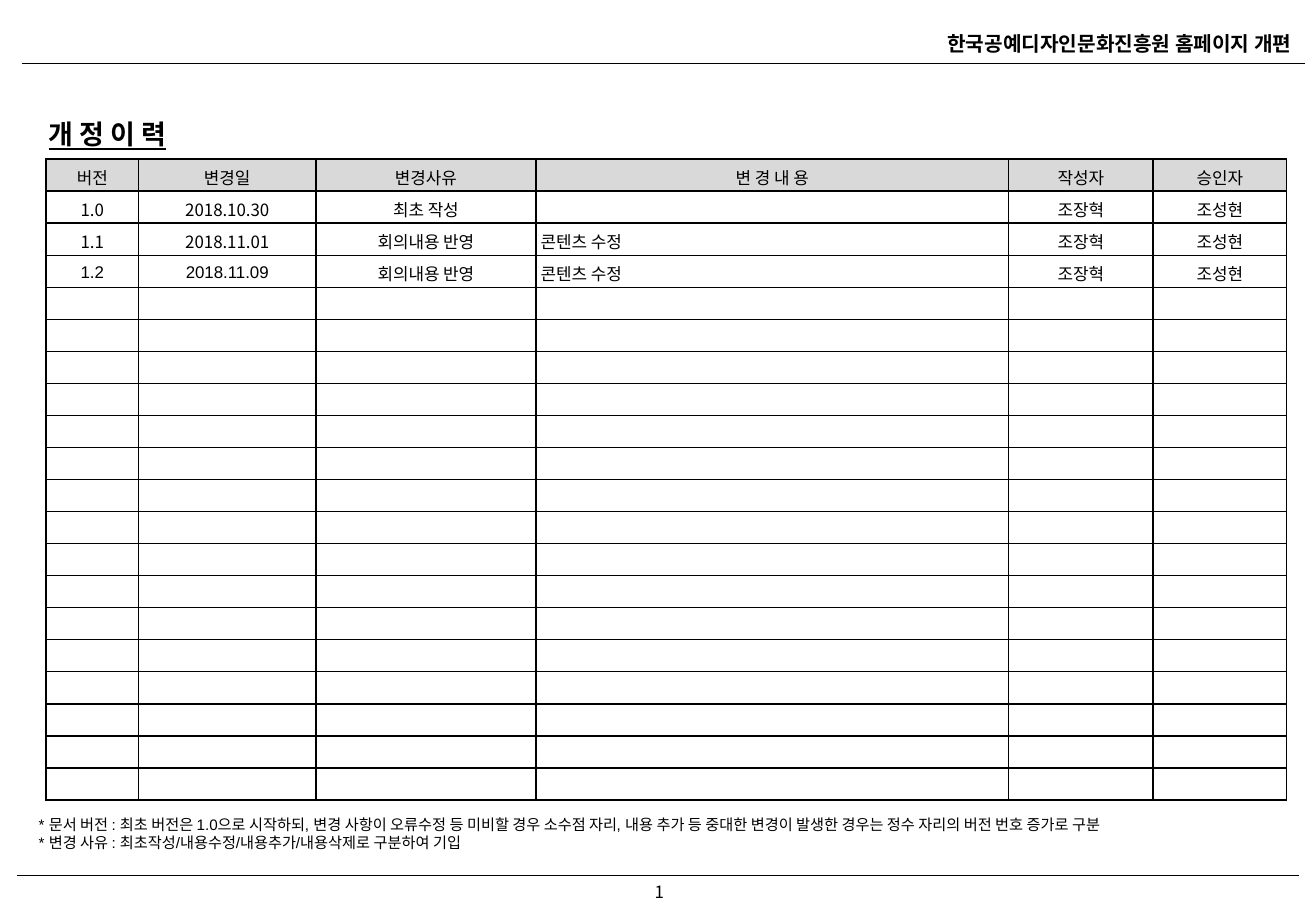
import pptx
import pptx.dml.color
import pptx.enum.dml
import pptx.enum.shapes
import pptx.enum.text
import pptx.oxml.ns
import pptx.util
from lxml import etree

BLACK = pptx.dml.color.RGBColor(0x00, 0x00, 0x00)
WHITE = pptx.dml.color.RGBColor(0xFF, 0xFF, 0xFF)
HEADER_GRAY = pptx.dml.color.RGBColor(0xD9, 0xD9, 0xD9)
KOREAN_FONT = "Noto Sans CJK KR"
LATIN_FONT = "Arial"

GRID = pptx.util.Inches(0.01)
GRID_COLUMNS, GRID_ROWS = 1083, 750

ALIGN = pptx.enum.text.PP_ALIGN
ANCHOR = pptx.enum.text.MSO_ANCHOR
AUTO_SIZE = pptx.enum.text.MSO_AUTO_SIZE

VERSION_COLUMNS = [76, 146, 181, 389, 119, 110]
VERSION_ROWS = 20
REVISIONS = [
    ["버전", "변경일", "변경사유", "변 경 내 용", "작성자", "승인자"],
    ["1.0", "2018.10.30", "최초 작성", "", "조장혁", "조성현"],
    ["1.1", "2018.11.01", "회의내용 반영", "콘텐츠 수정", "조장혁", "조성현"],
    ["1.2", "2018.11.09", "회의내용 반영", "콘텐츠 수정", "조장혁", "조성현"],
]
ARIAL_CELLS = {(3, 0), (3, 1)}
CHANGE_COLUMN = 3
NOTES = [
    "* 문서 버전 : 최초 버전은 1.0으로 시작하되, 변경 사항이 오류수정 등 미비할 경우 소수점 자리, "
    "내용 추가 등 중대한 변경이 발생한 경우는 정수 자리의 버전 번호 증가로 구분",
    "* 변경 사유 : 최초작성/내용수정/내용추가/내용삭제로 구분하여 기입",
]


def place(box):
    return [length * GRID for length in box]


def add_run(paragraph, text, size, latin=KOREAN_FONT, bold=False, underline=False):
    run = paragraph.add_run()
    run.text = text
    run.font.size = pptx.util.Pt(size)
    run.font.name = latin
    run.font.bold = bold
    run.font.underline = underline
    run.font.color.rgb = BLACK
    east_asian = etree.SubElement(run.font._element, pptx.oxml.ns.qn("a:ea"))
    east_asian.set("typeface", KOREAN_FONT)


def add_text(slide, box, lines, size, align=ALIGN.LEFT, anchor=ANCHOR.TOP, **style):
    frame = slide.shapes.add_textbox(*place(box)).text_frame
    frame.word_wrap = True
    frame.vertical_anchor = anchor
    for index, line in enumerate(lines):
        paragraph = frame.add_paragraph() if index else frame.paragraphs[0]
        paragraph.alignment = align
        add_run(paragraph, line, size, **style)


def add_rule(slide, left, top, width):
    rule = slide.shapes.add_connector(
        pptx.enum.shapes.MSO_CONNECTOR.STRAIGHT, *place((left, top, left + width, top)))
    rule.line.color.rgb = BLACK
    rule.line.width = pptx.util.Pt(0.75)
    etree.SubElement(rule._element.spPr, pptx.oxml.ns.qn("a:effectLst"))


def add_header(slide, box):
    left, top, width, height = box
    add_rule(slide, left, top + height, width)
    add_text(slide, (left + 479, top, 576, 30), ["한국공예디자인문화진흥원 홈페이지 개편"],
             12, ALIGN.RIGHT, bold=True)


def add_footer(slide, box):
    left, top, width, height = box
    add_rule(slide, left, top, width)
    add_text(slide, (left + 402, top, 253, height), ["1"], 10, ALIGN.CENTER, ANCHOR.MIDDLE)


def add_heading(slide, box):
    heading = slide.shapes.title
    heading.left, heading.top, heading.width, heading.height = place(box)
    frame = heading.text_frame
    frame.word_wrap = False
    frame.auto_size = AUTO_SIZE.SHAPE_TO_FIT_TEXT
    frame.vertical_anchor = ANCHOR.MIDDLE
    frame.paragraphs[0].alignment = ALIGN.LEFT
    add_run(frame.paragraphs[0], "개 정 이 력", 16, bold=True, underline=True)


def set_borders(cell):
    properties = cell._tc.get_or_add_tcPr()
    for index, side in enumerate(("a:lnL", "a:lnR", "a:lnT", "a:lnB")):
        border = etree.Element(pptx.oxml.ns.qn(side), w=str(pptx.util.Pt(1)))
        fill = etree.SubElement(border, pptx.oxml.ns.qn("a:solidFill"))
        etree.SubElement(fill, pptx.oxml.ns.qn("a:srgbClr"), val=str(BLACK))
        properties.insert(index, border)


def fill_cell(cell, text, background, align, latin):
    cell.fill.solid()
    cell.fill.fore_color.rgb = background
    set_borders(cell)
    cell.margin_left = cell.margin_right = 4 * GRID
    cell.margin_top = cell.margin_bottom = 0
    cell.vertical_anchor = ANCHOR.MIDDLE
    paragraph = cell.text_frame.paragraphs[0]
    paragraph.alignment = align
    paragraph.line_spacing = 1.15
    if text:
        add_run(paragraph, text, 10, latin)
    else:
        etree.SubElement(paragraph._p, pptx.oxml.ns.qn("a:endParaRPr"), sz="1000")


def add_revision_table(slide, box):
    history = slide.shapes.add_table(VERSION_ROWS, len(VERSION_COLUMNS), *place(box)).table
    history.horz_banding = False
    for column, width in zip(history.columns, VERSION_COLUMNS):
        column.width = int(box[2] * GRID * width / sum(VERSION_COLUMNS))
    for row_index, row in enumerate(history.rows):
        row.height = box[3] * GRID // VERSION_ROWS
        revision = REVISIONS[row_index] if row_index < len(REVISIONS) else [""] * len(VERSION_COLUMNS)
        for column_index, text in enumerate(revision):
            is_change = row_index > 0 and column_index == CHANGE_COLUMN
            fill_cell(
                row.cells[column_index], text,
                WHITE if row_index else HEADER_GRAY,
                ALIGN.LEFT if is_change else ALIGN.CENTER,
                LATIN_FONT if (row_index, column_index) in ARIAL_CELLS else KOREAN_FONT)


def add_notes(slide, box):
    add_text(slide, box, NOTES, 9, latin=LATIN_FONT)


def main():
    presentation = pptx.Presentation()
    presentation.slide_width = GRID_COLUMNS * GRID
    presentation.slide_height = GRID_ROWS * GRID
    slide = presentation.slides.add_slide(presentation.slide_layouts[5])
    add_header(slide, (18, 21, 1056, 31))
    add_heading(slide, (30, 92, 134, 37))
    add_revision_table(slide, (38, 131, 1021, 528))
    add_notes(slide, (22, 666, 1016, 40))
    add_footer(slide, (14, 721, 1055, 27))
    presentation.save("out.pptx")


if __name__ == "__main__":
    main()
